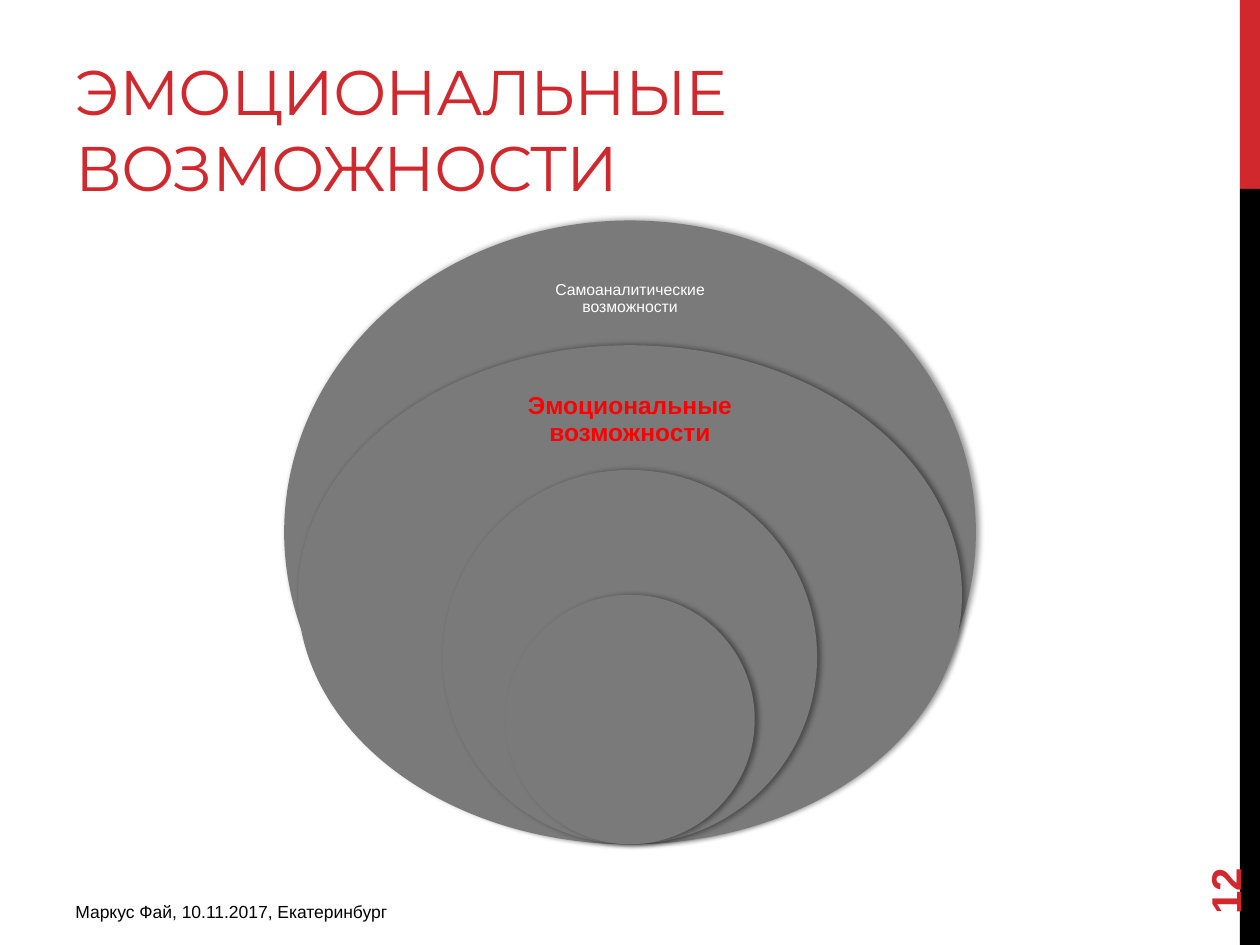
from lxml.etree import SubElement
from pptx import Presentation
from pptx.dml.color import RGBColor
from pptx.enum.shapes import MSO_SHAPE
from pptx.enum.text import MSO_ANCHOR, MSO_AUTO_SIZE, PP_ALIGN
from pptx.oxml.ns import qn
from pptx.util import Inches, Pt

RED = RGBColor(0xD1, 0x28, 0x2E)
BRIGHT_RED = RGBColor(0xFF, 0x00, 0x00)
GRAY = RGBColor(0x7A, 0x7A, 0x7A)
BLACK = RGBColor(0x00, 0x00, 0x00)
WHITE = RGBColor(0xFF, 0xFF, 0xFF)

CENTER_X = 5
RINGS_BOTTOM = 6.7
OUTER_HEIGHT = 4.95
RING_WIDTHS = [5.49, 5.27, 2.97, 1.98]
LABEL_INSET = 0.07


def add_span(para, text, size, color, bold=False, font="Arial"):
    """Append one formatted run to a paragraph."""
    span = para.add_run()
    span.text = text
    span.font.name = font
    span.font.size = Pt(size)
    span.font.bold = bold
    span.font.color.rgb = color
    return span


def add_filled_shape(page, kind, left, top, width, height, color):
    """Add a plain filled shape without an outline."""
    shape = page.shapes.add_shape(
        kind, Inches(left), Inches(top), Inches(width), Inches(height)
    )
    shape.shadow.inherit = False
    shape.fill.solid()
    shape.fill.fore_color.rgb = color
    shape.line.fill.background()
    return shape


def add_soft_shadow(shape):
    """Give a shape a soft black shadow to the right."""
    effects = shape.element.spPr.find(qn("a:effectLst"))
    shadow = SubElement(
        effects,
        qn("a:outerShdw"),
        blurRad=str(Pt(3.1)),
        dist=str(Pt(1.8)),
        dir="0",
        algn="ctr",
        rotWithShape="0",
    )
    color = SubElement(shadow, qn("a:srgbClr"), val=str(BLACK))
    SubElement(color, qn("a:alpha"), val="40000")


def add_ring(page, index, width):
    """Add one of the nested ellipses that share a bottom point."""
    height = OUTER_HEIGHT * (1 - index / 5)
    ring = add_filled_shape(
        page,
        MSO_SHAPE.OVAL,
        CENTER_X - width / 2,
        RINGS_BOTTOM - height,
        width,
        height,
        GRAY,
    )
    add_soft_shadow(ring)


def add_text(page, left, top, width, height, text, size, color, bold=False):
    """Add a wrapping text box with a single run."""
    box = page.shapes.add_textbox(
        Inches(left), Inches(top), Inches(width), Inches(height)
    )
    box.text_frame.word_wrap = True
    add_span(box.text_frame.paragraphs[0], text, size, color, bold)
    return box


def add_ring_label(page, top, width, height, text, size, color, bold=False):
    """Add a centred label to a ring."""
    box = add_text(
        page, CENTER_X - width / 2, top, width, height, text, size, color, bold
    )
    frame = box.text_frame
    frame.vertical_anchor = MSO_ANCHOR.MIDDLE
    frame.margin_left = frame.margin_right = Inches(LABEL_INSET)
    frame.margin_top = frame.margin_bottom = Inches(LABEL_INSET)
    para = frame.paragraphs[0]
    para.alignment = PP_ALIGN.CENTER
    para.line_spacing = 0.9


def format_title(page, text):
    """Place and fill the title placeholder."""
    title = page.shapes.title
    title.left, title.top = Inches(0.5), Inches(0.17)
    title.width, title.height = Inches(6.33), Inches(1.5)
    frame = title.text_frame
    frame.word_wrap = True
    frame.auto_size = MSO_AUTO_SIZE.NONE
    frame.vertical_anchor = MSO_ANCHOR.BOTTOM
    para = frame.paragraphs[0]
    para.alignment = PP_ALIGN.LEFT
    span = add_span(para, text, 36, RED, font="Montserrat")
    span.font._element.set("spc", "-60")


def add_page_number(page, number):
    """Add the page number turned to read upwards."""
    box = add_text(page, 9, 6.44, 1.44, 0.4, number, 24, RED, bold=True)
    box.rotation = 270
    box.text_frame.vertical_anchor = MSO_ANCHOR.MIDDLE


def main():
    """Build the slide and save the deck."""
    deck = Presentation()
    deck.slide_width, deck.slide_height = Inches(10), Inches(7.5)
    page = deck.slides.add_slide(deck.slide_layouts[5])
    page.background.fill.solid()
    page.background.fill.fore_color.rgb = WHITE

    add_filled_shape(page, MSO_SHAPE.RECTANGLE, 9.84, 0, 0.16, 1.5, RED)
    add_filled_shape(page, MSO_SHAPE.RECTANGLE, 9.84, 1.5, 0.16, 6, BLACK)
    format_title(page, "ЭМОЦИОНАЛЬНЫЕ ВОЗМОЖНОСТИ")

    for index, width in enumerate(RING_WIDTHS):
        add_ring(page, index, width)
    add_ring_label(page, 2, 1.54, 0.74, "Самоаналитические возможности", 9, WHITE)
    add_ring_label(
        page, 2.98, 1.84, 0.71, "Эмоциональные возможности", 14, BRIGHT_RED, bold=True
    )

    add_text(
        page, 0.5, 7.1, 3.75, 0.31, "Маркус Фай, 10.11.2017, Екатеринбург", 10, BLACK
    )
    add_page_number(page, "12")
    deck.save("out.pptx")


if __name__ == "__main__":
    main()
